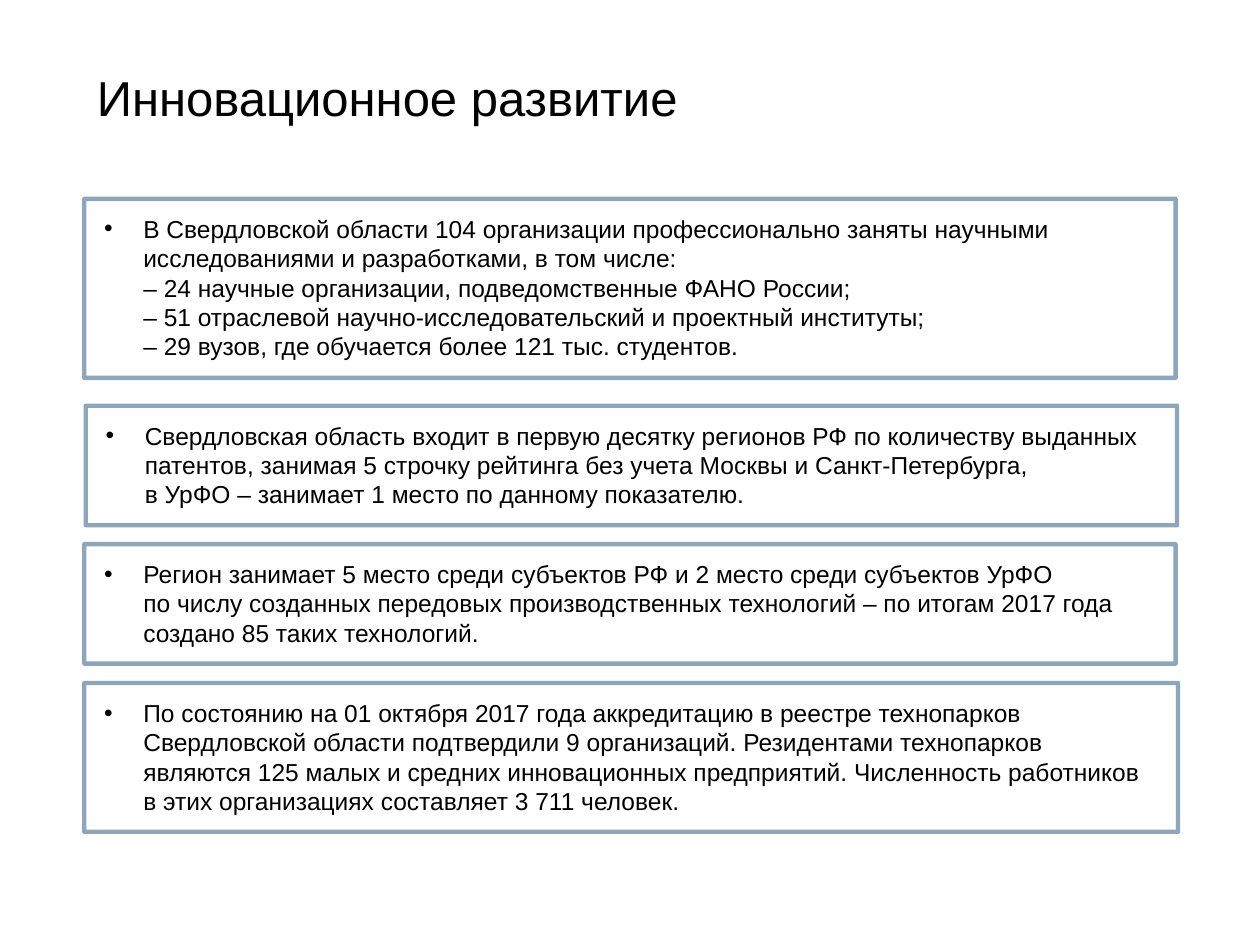
import copy
import pptx
import pptx.dml.color
import pptx.enum.shapes
import pptx.enum.text
import pptx.oxml
import pptx.oxml.ns
import pptx.util

Cm = pptx.util.Cm
Pt = pptx.util.Pt
qn = pptx.oxml.ns.qn

HEAD = "Инновационное развитие"
FACTS = [
    (1.7, 4.01, 22, 3.61,
     "В Свердловской области 104 организации профессионально заняты научными "
     "исследованиями и разработками, в том числе:\n"
     "– 24 научные организации, подведомственные ФАНО России;\n"
     "– 51 отраслевой научно-исследовательский и проектный институты;\n"
     "– 29 вузов, где обучается более 121 тыс. студентов."),
    (1.73, 8.18, 22, 2.41,
     "Свердловская область входит в первую десятку регионов РФ по количеству "
     "выданных патентов, занимая 5 строчку рейтинга без учета Москвы и "
     "Санкт-Петербурга,\nв УрФО – занимает 1 место по данному показателю."),
    (1.7, 10.97, 22, 2.41,
     "Регион занимает 5 место среди субъектов РФ и 2 место среди субъектов УрФО\n"
     "по числу созданных передовых производственных технологий – по итогам "
     "2017 года создано 85 таких технологий."),
    (1.7, 13.77, 22.05, 3,
     "По состоянию на 01 октября 2017 года аккредитацию в реестре технопарков "
     "Свердловской области подтвердили 9 организаций. Резидентами технопарков "
     "являются 125 малых и средних инновационных предприятий. Численность "
     "работников в этих организациях составляет 3 711 человек."),
]
COLORS = {"text": "000000", "fill": "FFFFFF", "line": "1F4E79"}
LEFT = pptx.enum.text.PP_ALIGN.LEFT
ANCHOR = pptx.enum.text.MSO_ANCHOR
FRAME = {
    "margin_left": Cm(0.4), "margin_right": Cm(0.6),
    "margin_top": Cm(0.3), "margin_bottom": Cm(0.3),
    "word_wrap": True, "vertical_anchor": ANCHOR.TOP,
    "auto_size": pptx.enum.text.MSO_AUTO_SIZE.SHAPE_TO_FIT_TEXT,
}
TITLE = {"word_wrap": True, "vertical_anchor": ANCHOR.MIDDLE,
         "auto_size": pptx.enum.text.MSO_AUTO_SIZE.NONE}
INDENT = Cm(0.79)


def apply(obj, form):
    for key, val in form.items():
        setattr(obj, key, val)


def place(shape, *box):
    apply(shape, dict(zip(("left", "top", "width", "height"), map(Cm, box))))


def paint(fill, name, alpha):
    fill.solid()
    fill.fore_color.rgb = pptx.dml.color.RGBColor.from_string(COLORS[name])
    tint = fill._xPr.find(qn("a:solidFill"))[0]
    child(tint, "a:alpha", val=str(alpha * 1000))


def child(node, tag, **attrs):
    item = pptx.oxml.parse_xml(f"<{tag} {pptx.oxml.ns.nsdecls('a')}/>")
    for key, val in attrs.items():
        item.set(key, val)
    node.append(item)


def write(para, text, size):
    para.text = text
    para.alignment = LEFT
    for run in para.runs:
        apply(run.font, {"size": Pt(size), "name": "Arial"})
        run.font.color.rgb = pptx.dml.color.RGBColor.from_string(COLORS["text"])
    for gap in para._p.findall(qn("a:br")):
        gap.insert(0, copy.deepcopy(para.runs[0]._r.rPr))


def panel(slide, left, top, width, height, text):
    box = slide.shapes.add_shape(
        pptx.enum.shapes.MSO_SHAPE.RECTANGLE,
        Cm(left), Cm(top), Cm(width), Cm(height))
    box.shadow.inherit = False
    paint(box.fill, "fill", 80)
    paint(box.line.fill, "line", 50)
    box.line.width = Pt(2.5)
    apply(box.text_frame, FRAME)
    para = box.text_frame.paragraphs[0]
    props = para._p.get_or_add_pPr()
    props.set("marL", str(INDENT))
    props.set("indent", str(-INDENT))
    child(props, "a:buFont", typeface="Arial")
    child(props, "a:buChar", char="•")
    write(para, text, 14)


def main():
    deck = pptx.Presentation()
    apply(deck, {"slide_width": Cm(25.4), "slide_height": Cm(19.05)})
    slide = deck.slides.add_slide(deck.slide_layouts[5])
    title = slide.shapes.title
    place(title, 1.7, 0.53, 22, 3)
    apply(title.text_frame, TITLE)
    para = title.text_frame.paragraphs[0]
    write(para, HEAD, 28)
    para.line_spacing = 0.9
    for fact in FACTS:
        panel(slide, *fact)
    deck.save("out.pptx")


if __name__ == "__main__":
    main()
